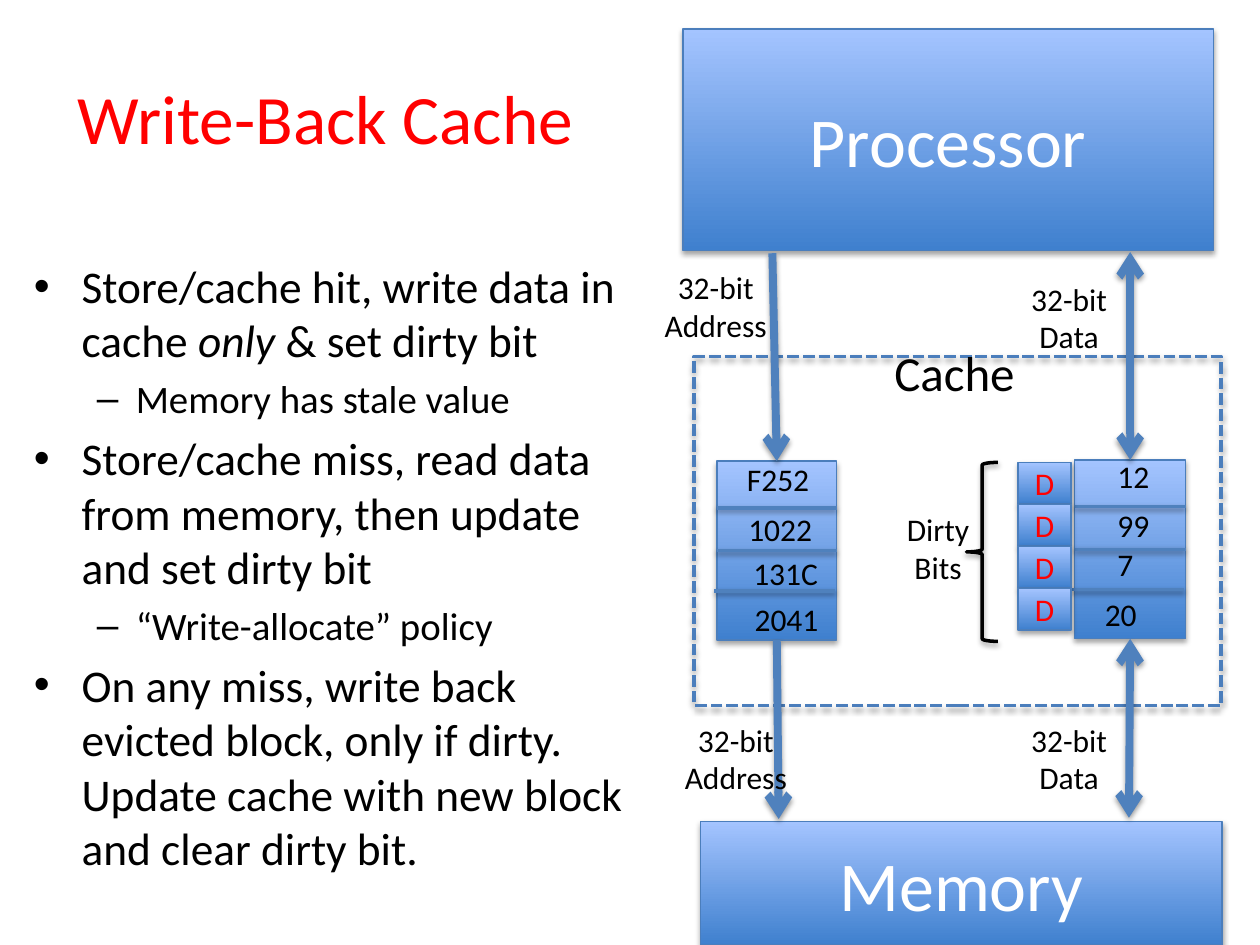
from lxml.etree import SubElement
from pptx import Presentation
from pptx.dml.color import RGBColor
from pptx.enum.dml import MSO_LINE
from pptx.enum.shapes import MSO_CONNECTOR, MSO_SHAPE
from pptx.enum.text import MSO_ANCHOR, MSO_AUTO_SIZE, PP_ALIGN
from pptx.oxml.ns import qn
from pptx.util import Inches, Pt

FONT = "Calibri"
BLACK, WHITE, RED = "000000", "FFFFFF", "FF0000"
EDGE, ARROW = "4B7EBC", "4F81BD"
FILL_BOTTOM, FILL_TOP = "3F80CE", "A4C4FF"
TOP, BOTTOM = 0, 2

# (level, [(text, italic), ...])
POINTS = [
    (0, [("Store/cache hit, write data in cache ", False), ("only ", True),
         ("& set dirty bit", False)]),
    (1, [("Memory has stale value", False)]),
    (0, [("Store/cache miss, read data from memory, then update and set dirty bit", False)]),
    (1, [("“Write-allocate” policy", False)]),
    (0, [("On any miss, write back evicted block, only if dirty. "
          "Update cache with new block and clear dirty bit.", False)]),
]
# level: (bullet, size, left margin, hanging indent)
LEVELS = {0: ("•", 25.9, 0.38, 0.38), 1: ("–", 22.2, 0.81, 0.31)}

# (text, left, top, width)
BUS_LABELS = [
    ("32-bit\nAddress", 5.17, 2.08, 1.02),
    ("32-bit\nData", 8.08, 2.17, 0.81),
    ("32-bit\nAddress", 5.33, 5.67, 1.02),
    ("32-bit\nData", 8.08, 5.67, 0.81),
]
CELL_VALUES = [
    ("F252", 5.83, 3.6, 0.96), ("1022", 5.84, 4, 0.71),
    ("131C", 5.88, 4.35, 0.85), ("2041", 5.89, 4.71, 0.85),
    ("12", 8.77, 3.58, 0.46), ("99", 8.77, 3.97, 0.46),
    ("7", 8.77, 4.28, 0.33), ("20", 8.67, 4.67, 0.46),
]


def rgb(value):
    return RGBColor.from_string(value)


def style_run(run, size, color, italic=False):
    font = run.font
    font.name, font.size, font.italic = FONT, Pt(size), italic
    font.color.rgb = rgb(color)


def write(frame, text, size=18, color=BLACK, align=PP_ALIGN.CENTER,
          anchor=MSO_ANCHOR.TOP, wrap=True):
    """Fill a text frame, one paragraph for each line of text."""
    frame.word_wrap = wrap
    frame.auto_size = MSO_AUTO_SIZE.NONE
    frame.vertical_anchor = anchor
    frame.text = text
    for paragraph in frame.paragraphs:
        paragraph.alignment = align
        for run in paragraph.runs:
            style_run(run, size, color)


def add_label(slide, text, left, top, width, height, **text_format):
    label = slide.shapes.add_textbox(*map(Inches, (left, top, width, height)))
    write(label.text_frame, text, **text_format)


def add_soft_shadow(element, alpha, distance):
    """Give a shape or connector a downward shadow."""
    properties = element._element.spPr
    effects = properties.find(qn("a:effectLst"))
    if effects is None:
        effects = SubElement(properties, qn("a:effectLst"))
    shadow = SubElement(effects, qn("a:outerShdw"), blurRad=str(Pt(3.1)),
                        dist=str(Pt(distance)), dir="5400000", rotWithShape="0")
    color = SubElement(shadow, qn("a:srgbClr"), val=BLACK)
    SubElement(color, qn("a:alpha"), val=str(alpha * 1000))


def add_outline(slide, kind, left, top, width, height, color=EDGE, weight=0.75):
    """Add an unfilled shape with an edge and a shadow."""
    shape = slide.shapes.add_shape(kind, *map(Inches, (left, top, width, height)))
    shape.fill.background()
    shape.line.color.rgb = rgb(color)
    shape.line.width = Pt(weight)
    shape.shadow.inherit = False
    add_soft_shadow(shape, 35, 1.8)
    return shape


def add_block(slide, left, top, width, height, text="", size=40, color=WHITE):
    block = add_outline(slide, MSO_SHAPE.RECTANGLE, left, top, width, height)
    block.fill.gradient()
    block.fill.gradient_angle = 90
    for stop, shade in zip(block.fill.gradient_stops, (FILL_BOTTOM, FILL_TOP)):
        stop.color.rgb = rgb(shade)
    if text:
        write(block.text_frame, text, size=size, color=color, anchor=MSO_ANCHOR.MIDDLE)
    return block


def add_line(slide, start, end, weight=2, heads=(), begin_at=None, end_at=None):
    """Draw a line; begin_at and end_at are (shape, side) pairs to join."""
    line = slide.shapes.add_connector(
        MSO_CONNECTOR.STRAIGHT, *map(Inches, (*start, *end)))
    if begin_at:
        line.begin_connect(*begin_at)
    if end_at:
        line.end_connect(*end_at)
    line.line.color.rgb = rgb(ARROW)
    line.line.width = Pt(weight)
    for head in heads:
        SubElement(line.line._get_or_add_ln(), qn(f"a:{head}"), type="arrow")
    add_soft_shadow(line, 38, 1.6)


def add_cache_column(slide, left, top, width):
    """Add a block of four cells and return it."""
    column = add_block(slide, left, top, width, 1.42)
    for offset, shift in ((0.37, 0), (0.71, 0), (1.03, -0.02)):
        y = top + offset
        add_line(slide, (left + shift, y), (left + width + shift / 2, y))
    return column


def add_points(slide):
    box = slide.shapes.add_textbox(*map(Inches, (0.17, 2, 5, 4.95)))
    frame = box.text_frame
    frame.word_wrap = True
    for index, (level, pieces) in enumerate(POINTS):
        bullet, size, margin, hanging = LEVELS[level]
        paragraph = frame.add_paragraph() if index else frame.paragraphs[0]
        paragraph.level = level
        paragraph.space_before = Pt(round(size * 0.2, 1))
        properties = paragraph._p.get_or_add_pPr()
        properties.set("marL", str(Inches(margin)))
        properties.set("indent", str(-Inches(hanging)))
        SubElement(properties, qn("a:buFont"), typeface="Arial")
        SubElement(properties, qn("a:buChar"), char=bullet)
        for text, italic in pieces:
            run = paragraph.add_run()
            run.text = text
            style_run(run, size, BLACK, italic)


def add_title(slide, text):
    title = slide.shapes.title
    title.left, title.top, title.width, title.height = map(
        Inches, (0.5, 0.3, 4.17, 1.25))
    write(title.text_frame, text, size=39.6, color=RED, anchor=MSO_ANCHOR.MIDDLE)


def add_diagram(slide):
    add_block(slide, 5.42, 0.23, 4.21, 1.76, "Processor")
    frame = add_outline(slide, MSO_SHAPE.RECTANGLE, 5.51, 2.83, 4.18, 2.77, weight=2.25)
    frame.line.dash_style = MSO_LINE.SQUARE_DOT
    add_block(slide, 5.56, 6.52, 4.14, 0.98, "Memory")

    addresses = add_cache_column(slide, 5.69, 3.66, 0.95)
    data = add_cache_column(slide, 8.53, 3.65, 0.88)
    one_way, two_way = ("tailEnd",), ("headEnd", "tailEnd")
    add_line(slide, (6.13, 2.01), (6.16, 3.66), 4.5, one_way, end_at=(addresses, TOP))
    add_line(slide, (6.16, 5.08), (6.18, 6.5), 4.5, one_way, begin_at=(addresses, BOTTOM))
    add_line(slide, (8.97, 2), (8.97, 3.65), 4.5, two_way, end_at=(data, TOP))
    add_line(slide, (8.97, 5.07), (8.96, 6.49), 4.5, two_way, begin_at=(data, BOTTOM))

    for row in range(4):
        add_block(slide, 8.08, 3.67 + row / 3, 0.42, 0.33, "D", size=18, color=RED)
    add_outline(slide, MSO_SHAPE.LEFT_BRACE, 7.67, 3.67, 0.25, 1.42, BLACK, 2)

    add_label(slide, "Cache", 7, 2.67, 1.17, 0.57, size=28, align=PP_ALIGN.LEFT, wrap=False)
    add_label(slide, "Dirty Bits", 7, 4, 0.89, 0.71)
    for text, left, top, width in BUS_LABELS:
        add_label(slide, text, left, top, width, 0.71, wrap=False)
    for text, left, top, width in CELL_VALUES:
        add_label(slide, text, left, top, width, 0.4, align=PP_ALIGN.LEFT, wrap=False)


def main():
    deck = Presentation()
    deck.slide_width, deck.slide_height = Inches(10), Inches(7.5)
    slide = deck.slides.add_slide(deck.slide_layouts[5])
    add_title(slide, "Write-Back Cache")
    add_points(slide)
    add_diagram(slide)
    deck.save("out.pptx")


if __name__ == "__main__":
    main()
